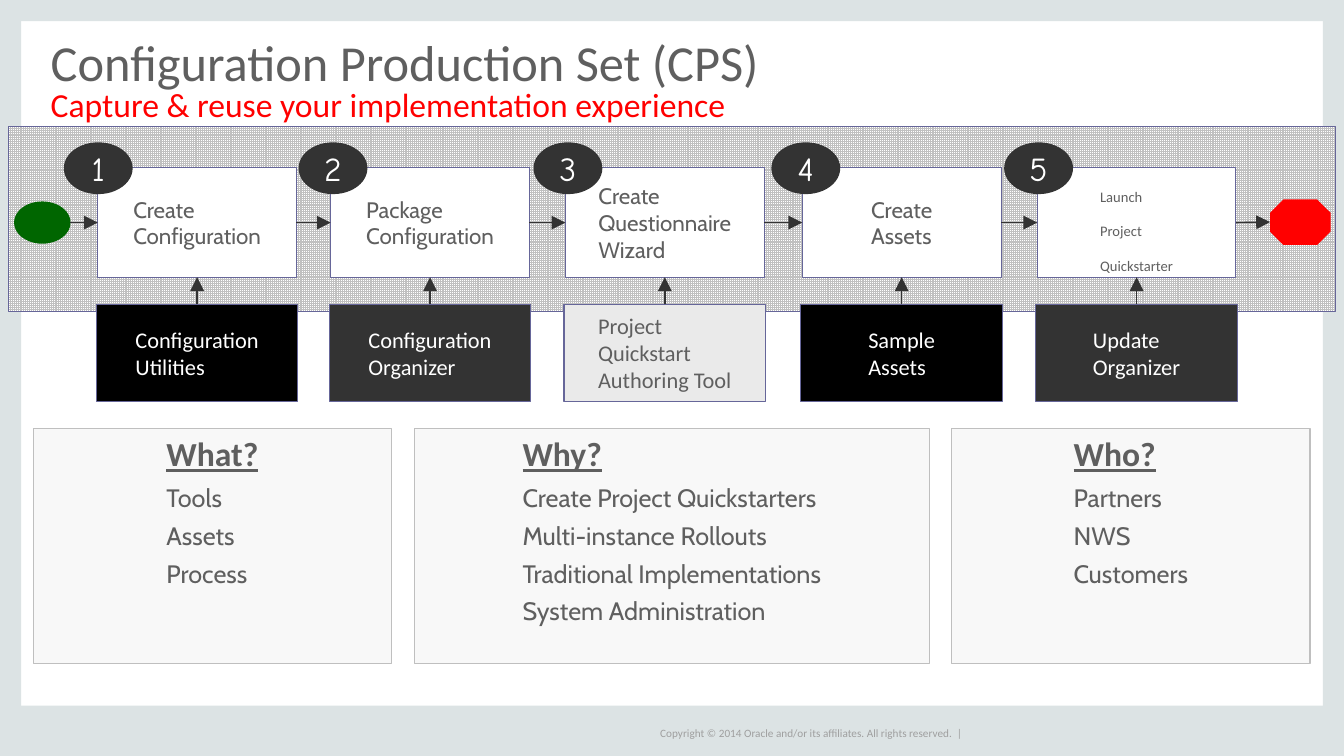
from copy import deepcopy

from lxml.etree import SubElement
from pptx import Presentation
from pptx.dml.color import RGBColor
from pptx.enum.dml import MSO_PATTERN
from pptx.enum.shapes import MSO_CONNECTOR, MSO_SHAPE as Preset
from pptx.enum.text import MSO_ANCHOR as Anchor, PP_ALIGN as Align
from pptx.oxml.ns import qn
from pptx.util import Pt

WHITE = RGBColor(0xFF, 0xFF, 0xFF)
BLACK = RGBColor(0x00, 0x00, 0x00)
CHARCOAL = RGBColor(0x33, 0x33, 0x33)
GREY = RGBColor(0x5F, 0x5F, 0x5F)
FOOTER_GREY = RGBColor(0x9F, 0x9F, 0x9F)
GRID_GREY = RGBColor(0xC0, 0xC0, 0xC0)
PALE = RGBColor(0xEA, 0xEA, 0xEA)
PANEL = RGBColor(0xF8, 0xF8, 0xF8)
PANEL_EDGE = RGBColor(0xBF, 0xBF, 0xBF)
FRAME = RGBColor(0xDC, 0xE3, 0xE4)
INDIGO = RGBColor(0x66, 0x66, 0x99)
RED = RGBColor(0xFF, 0x00, 0x00)
GREEN = RGBColor(0x00, 0x66, 0x00)

CARD_TEXT = {"name": "Cabin", "size": Pt(16)}
TOOL_TEXT = {"name": "Calibri", "size": Pt(16)}
LAUNCH_TEXT = {"name": "Calibri", "size": Pt(18)}
BADGE_TEXT = {"name": "Comic Neue", "size": Pt(24)}
HEADING_TEXT = {"name": "Calibri", "size": Pt(24), "bold": True, "underline": True}
ITEM_TEXT = {"name": "Cabin", "size": Pt(18)}
TITLE_TEXT = {"name": "Calibri", "size": Pt(36)}
SUBTITLE_TEXT = {"name": "Calibri", "size": Pt(24)}
FOOTER_TEXT = {"name": "Calibri", "size": Pt(8)}

# Card left, badge left, card text, tool text, tool fill, tool text colour
STEPS = [
    (69.8, 46.1, ["Create\nConfiguration"], ["Configuration\nUtilities"], BLACK, WHITE),
    (236.2, 213.8, ["Package\nConfiguration"], ["Configuration\nOrganizer"], CHARCOAL, WHITE),
    (403.9, 381.6, ["Create\nQuestionnaire\nWizard"],
     ["Project\nQuickstart\nAuthoring Tool"], PALE, GREY),
    (573.1, 551.5, ["Create", "Assets"], ["Sample", "Assets"], BLACK, WHITE),
    (740.9, 717.8, ["Launch\nProject\nQuickstarter"], ["Update", "Organizer"], CHARCOAL, WHITE),
]

# Left, width, heading, items
PANELS = [
    (23.8, 255.9, "What?", ["Tools", "Assets", "Process"]),
    (295.9, 367.9, "Why?", ["Create Project Quickstarters", "Multi-instance Rollouts",
                            "Traditional Implementations", "System Administration"]),
    (679.9, 255.9, "Who?", ["Partners", "NWS", "Customers"]),
]


def add_box(page, preset, left, top, width, height, fill, edge=None, weight=0.75):
    box = page.shapes.add_shape(preset, Pt(left), Pt(top), Pt(width), Pt(height))
    box.shadow.inherit = False
    if fill is not None:
        box.fill.solid()
        box.fill.fore_color.rgb = fill
    if edge is None:
        box.line.fill.background()
    else:
        box.line.color.rgb = edge
        box.line.width = Pt(weight)
    return box


def set_frame(box, anchor, side=0, edge=0, wrap=True):
    frame = box.text_frame
    layout = {"vertical_anchor": anchor, "word_wrap": wrap, "margin_left": Pt(side),
              "margin_right": Pt(side), "margin_top": Pt(edge), "margin_bottom": Pt(edge)}
    for name, value in layout.items():
        setattr(frame, name, value)
    return frame


def add_span(para, text, style, color):
    span = para.add_run()
    span.text = text
    for name, value in style.items():
        setattr(span.font, name, value)
    span.font.color.rgb = color
    return span


def add_lines(para, text, style, color, baseline=None):
    """Write lines parted by breaks that keep the format of the text."""
    for index, line in enumerate(text.split("\n")):
        if index:
            para.add_line_break()
        span = add_span(para, line, style, color)
        if baseline:
            span.font._element.set("baseline", baseline)
    for line_break in para._p.findall(qn("a:br")):
        line_break.insert(0, deepcopy(span.font._element))


def fill_block(box, texts, style, color, baseline=None):
    """Left-aligned lines, centred in the box as one block."""
    frame = set_frame(box, Anchor.MIDDLE, edge=3.6)
    box.element.txBody.bodyPr.set("anchorCtr", "1")
    for index, text in enumerate(texts):
        para = frame.add_paragraph() if index else frame.paragraphs[0]
        para.alignment = Align.LEFT
        add_lines(para, text, style, color, baseline)


def add_arrow(page, begin=(0, 0), end=(0, 0), begin_join=None, end_join=None):
    arrow = page.shapes.add_connector(
        MSO_CONNECTOR.STRAIGHT, *[Pt(length) for length in (*begin, *end)])
    if begin_join:
        arrow.begin_connect(*begin_join)
    if end_join:
        arrow.end_connect(*end_join)
    arrow.line.color.rgb = CHARCOAL
    arrow.line.width = Pt(1)
    SubElement(arrow.line._get_or_add_ln(), qn("a:tailEnd"), type="triangle", w="lg", len="lg")
    SubElement(arrow._element.spPr, qn("a:effectLst"))


def draw_frame(page, width, height):
    side, foot = 15.1, 36
    for bar in [(0, 0, side, height), (width - side, 0, side, height),
                (0, height - foot, width, foot), (0, 0, width, side)]:
        add_box(page, Preset.RECTANGLE, *bar, FRAME)
    footer = page.shapes.add_textbox(Pt(471.6), Pt(height - 23.8), Pt(219.6), Pt(14.4))
    frame = set_frame(footer, Anchor.MIDDLE, wrap=False)
    add_span(frame.paragraphs[0],
             "Copyright © 2014 Oracle and/or its affiliates. All rights reserved.  |",
             FOOTER_TEXT, FOOTER_GREY)


def draw_title(page, left, top, width, height):
    title = page.shapes.add_textbox(Pt(left), Pt(top), Pt(width), Pt(height))
    para = set_frame(title, Anchor.BOTTOM).paragraphs[0]
    para.line_spacing = 0.8
    heading = add_span(para, "Configuration Production Set (CPS)", TITLE_TEXT, GREY)
    para.add_line_break()
    para._p.find(qn("a:br")).insert(0, deepcopy(heading.font._element))
    add_span(para, "Capture & reuse your implementation experience", SUBTITLE_TEXT, RED)


def draw_flow(page, left, top, width, height):
    # Band behind the steps
    band = add_box(page, Preset.RECTANGLE, left, top, width, height, None, INDIGO, 0.25)
    band.fill.patterned()
    band.fill.pattern = MSO_PATTERN.SMALL_GRID
    band.fill.fore_color.rgb = GRID_GREY
    band.fill.back_color.rgb = WHITE

    # Cards with the tool below each
    cards = []
    for card_left, _, card_text, tool_text, tool_fill, tool_color in STEPS:
        last = card_left == STEPS[-1][0]
        card = add_box(page, Preset.RECTANGLE, card_left, top + 30, 142, 78, WHITE, INDIGO)
        fill_block(card, card_text, LAUNCH_TEXT if last else CARD_TEXT, GREY,
                   "-25000" if last else None)
        tool = add_box(page, Preset.RECTANGLE, card_left - 1, top + 127.4, 144, 69.1,
                       tool_fill, INDIGO)
        fill_block(tool, tool_text, TOOL_TEXT, tool_color)
        add_arrow(page, begin_join=(tool, 0), end_join=(card, 2))
        cards.append(card)

    # Start, stop and the arrows between
    middle = top + 69
    add_box(page, Preset.OVAL, left + 4.3, middle - 15.1, 40.3, 30.2, GREEN)
    stop = add_box(page, Preset.OCTAGON, left + 901.4, middle - 16.5, 43.2, 32.4, RED)
    stop.adjustments[0] = 0.293
    add_arrow(page, begin=(left + 44.2, middle), end_join=(cards[0], 1))
    for card, following in zip(cards, cards[1:]):
        add_arrow(page, begin_join=(card, 3), end_join=(following, 1))
    add_arrow(page, end=(left + 901.4, middle - 0.4), begin_join=(cards[-1], 3))

    # Numbered badges
    for number, (_, badge_left, *_) in enumerate(STEPS, 1):
        badge = add_box(page, Preset.OVAL, badge_left, top + 12.2, 48.2, 36,
                        CHARCOAL, CHARCOAL, 1)
        para = set_frame(badge, Anchor.MIDDLE, 7.2, 3.6, wrap=False).paragraphs[0]
        para.alignment = Align.CENTER
        add_span(para, str(number), BADGE_TEXT, WHITE)


def draw_panel(page, left, top, width, height, heading, items):
    panel = add_box(page, Preset.RECTANGLE, left, top, width, height, PANEL, PANEL_EDGE, 1)
    fill_block(panel, [heading], HEADING_TEXT, GREY)
    frame = panel.text_frame
    frame.vertical_anchor = Anchor.TOP
    frame.paragraphs[0].space_after = Pt(3.6)
    for item in items:
        para = frame.add_paragraph()
        para.alignment = Align.LEFT
        para.space_before = para.space_after = Pt(2.7)
        add_span(para, item, ITEM_TEXT, GREY)


def main():
    deck = Presentation()
    deck.slide_width, deck.slide_height = Pt(960), Pt(540)
    page = deck.slides.add_slide(deck.slide_layouts[6])
    draw_frame(page, 960, 540)
    draw_flow(page, 5.8, 90, 947.8, 132)
    for left, width, heading, items in PANELS:
        draw_panel(page, left, 306, width, 167.8, heading, items)
    draw_title(page, 36.2, 18.7, 876.2, 69.8)
    deck.save("out.pptx")


if __name__ == "__main__":
    main()
